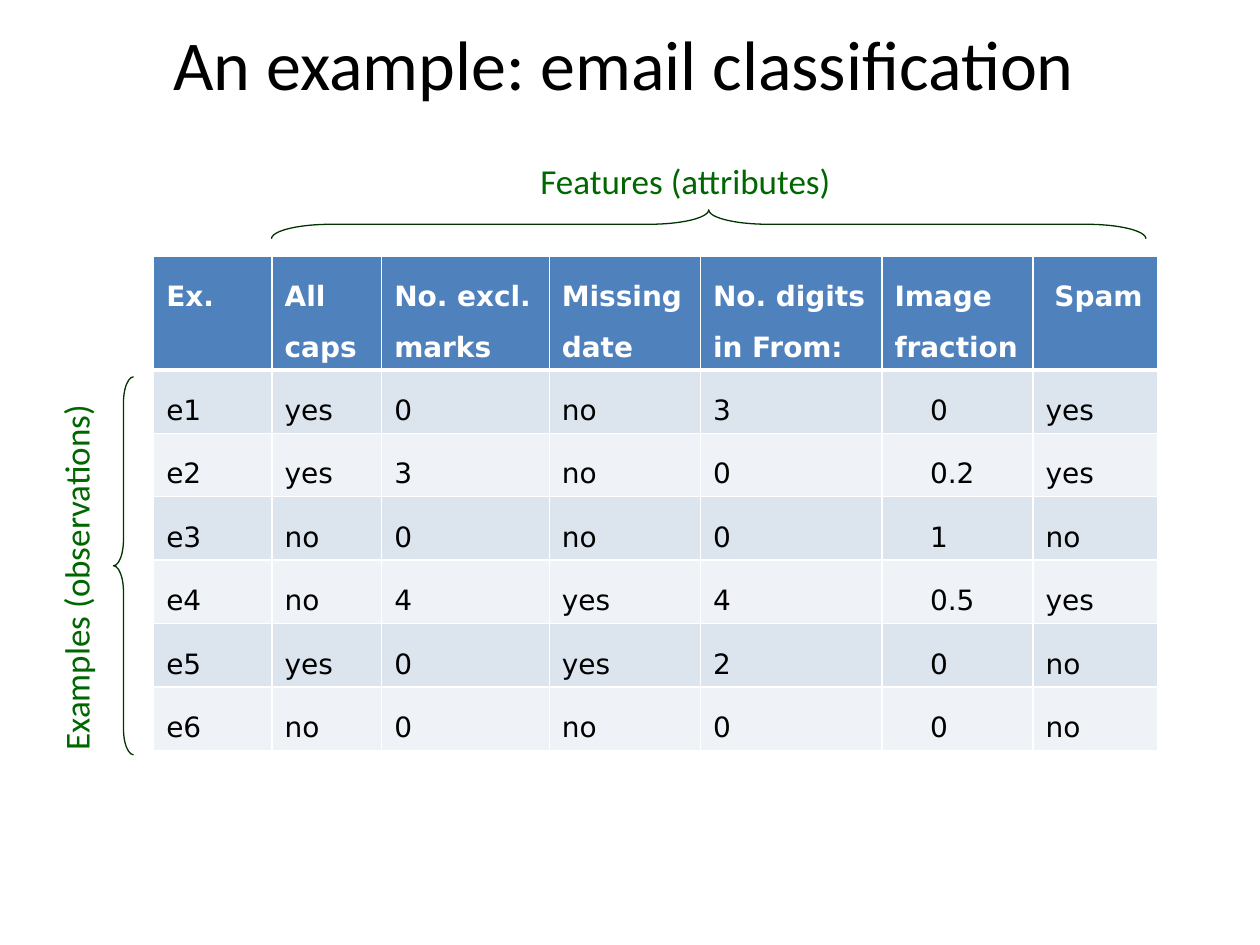
import pptx
import pptx.dml.color
import pptx.enum.shapes
import pptx.enum.text
import pptx.oxml
import pptx.oxml.ns
import pptx.util

# The slide is a grid of 100 columns by 75 rows
COLUMNS, ROWS = 100, 75
SLIDE_WIDTH = pptx.util.Inches(10)
SLIDE_HEIGHT = pptx.util.Inches(7.5)

BODY_FONT, TABLE_FONT = "Calibri", "DejaVu Sans"
BLACK, WHITE = "000000", "FFFFFF"
LABEL_GREEN, BRACE_GREEN = "006600", "003300"
HEADER_BLUE = "4F81BD"
BANDS = ("DCE5EE", "EFF3F7")

COLUMN_WIDTHS = (9.4, 8.7, 13.3, 12, 14.4, 12, 9.9)
HEADER_HEIGHT, EXAMPLE_HEIGHT = 9.05, 5.03
CELL_MARGIN = 1
FRACTION_COLUMN, SPAM_COLUMN = 5, 6
FRACTION_INDENT, SPAM_INDENT = 2.83, 0.7

HEADERS = ("Ex.", "All\ncaps", "No. excl. marks", "Missing\ndate",
           "No. digits in From:", "Image fraction", "Spam")
EXAMPLES = (
    ("e1", "yes", "0", "no", "3", "0", "yes"),
    ("e2", "yes", "3", "no", "0", "0.2", "yes"),
    ("e3", "no", "0", "no", "0", "1", "no"),
    ("e4", "no", "4", "yes", "4", "0.5", "yes"),
    ("e5", "yes", "0", "yes", "2", "0", "no"),
    ("e6", "no", "0", "no", "0", "0", "no"),
)


def across(columns):
    return round(SLIDE_WIDTH * columns / COLUMNS)


def down(rows):
    return round(SLIDE_HEIGHT * rows / ROWS)


def area(left, top, width, height):
    return across(left), down(top), across(width), down(height)


def colour(code):
    return pptx.dml.color.RGBColor.from_string(code)


def add_span(para, text, size, font, code, bold=False):
    span = para.add_run()
    span.text = text
    span.font.size = pptx.util.Pt(size)
    span.font.name = font
    span.font.bold = bold
    span.font.color.rgb = colour(code)


def add_title(page, text, place):
    box = page.shapes.add_textbox(*place)
    frame = box.text_frame
    frame.word_wrap = True
    frame.vertical_anchor = pptx.enum.text.MSO_ANCHOR.MIDDLE
    para = frame.paragraphs[0]
    para.alignment = pptx.enum.text.PP_ALIGN.CENTER
    add_span(para, text, 40, BODY_FONT, BLACK)


def add_label(page, text, place, rotation=0):
    box = page.shapes.add_textbox(*place)
    box.rotation = rotation
    frame = box.text_frame
    frame.word_wrap = False
    frame.auto_size = pptx.enum.text.MSO_AUTO_SIZE.SHAPE_TO_FIT_TEXT
    add_span(frame.paragraphs[0], text, 20, BODY_FONT, LABEL_GREEN)


def add_brace(page, place, rotation, curve):
    brace = page.shapes.add_shape(
        pptx.enum.shapes.MSO_SHAPE.RIGHT_BRACE, *place)
    brace.rotation = rotation
    brace.adjustments[0] = curve
    brace.shadow.inherit = False
    brace.fill.background()
    brace.line.color.rgb = colour(BRACE_GREEN)
    brace.line.width = pptx.util.Pt(0.75)


def add_border(cell, side, points):
    width = pptx.util.Pt(points)
    cell._tc.get_or_add_tcPr().append(pptx.oxml.parse_xml(
        f'<a:ln{side} {pptx.oxml.ns.nsdecls("a")} w="{width}"><a:solidFill>'
        f'<a:srgbClr val="{WHITE}"/></a:solidFill></a:ln{side}>'))


def fill_cell(cell, text, row, indent):
    header = row == 0
    # Borders come before the fill; a thick rule sits under the header
    for side in "LRTB":
        thick = (row, side) in ((0, "B"), (1, "T"))
        add_border(cell, side, 3 if thick else 1)
    cell.fill.solid()
    cell.fill.fore_color.rgb = colour(
        HEADER_BLUE if header else BANDS[(row - 1) % 2])
    cell.margin_left = across(CELL_MARGIN + indent)
    para = cell.text_frame.paragraphs[0]
    para.line_spacing = pptx.util.Pt(29)
    for number, line in enumerate(text.split("\n")):
        if number:
            para.add_line_break()
        add_span(para, line, 16, TABLE_FONT,
                 WHITE if header else BLACK, header)


def add_examples_table(page, left, top):
    heights = [HEADER_HEIGHT] + [EXAMPLE_HEIGHT] * len(EXAMPLES)
    place = area(left, top, sum(COLUMN_WIDTHS), sum(heights))
    table = page.shapes.add_table(
        len(heights), len(COLUMN_WIDTHS), *place).table
    for column, width in zip(table.columns, COLUMN_WIDTHS):
        column.width = across(width)
    for row, height in zip(table.rows, heights):
        row.height = down(height)
    for row, texts in enumerate((HEADERS,) + EXAMPLES):
        for column, text in enumerate(texts):
            indent = 0
            if row and column == FRACTION_COLUMN:
                indent = FRACTION_INDENT
            elif not row and column == SPAM_COLUMN:
                indent = SPAM_INDENT
            fill_cell(table.cell(row, column), text, row, indent)


def main():
    deck = pptx.Presentation()
    deck.slide_width, deck.slide_height = SLIDE_WIDTH, SLIDE_HEIGHT
    page = deck.slides.add_slide(deck.slide_layouts[6])

    add_title(page, "An example: email classification",
              area(10.6, 1.7, 77.8, 6.5))

    # Features run across the table
    add_label(page, "Features (attributes)", area(41.9, 12.2, 31, 4.3))
    add_brace(page, area(55.1, -16.9, 2.3, 69.4), 270, 2.07)

    # Examples run down the table
    add_brace(page, area(9, 29.9, 1.6, 30), 180, 1.3)
    add_label(page, "Examples (observations)",
              area(-12.3, 40.1, 36.6, 4.3), 270)

    add_examples_table(page, 12.2, 20.3)
    deck.save("out.pptx")


if __name__ == "__main__":
    main()
